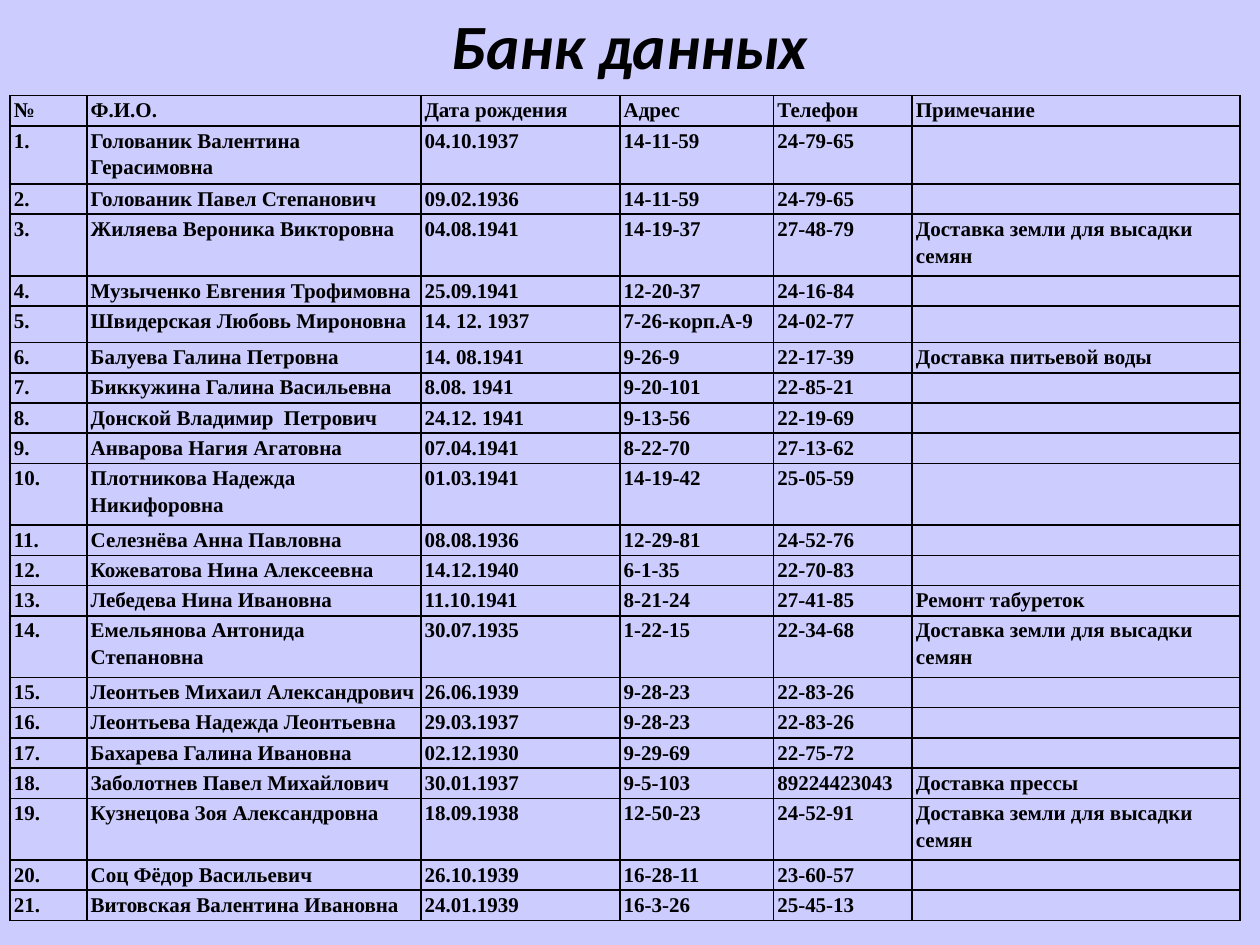
"""Build a slide with a contact register table under a title."""
from lxml import etree
from pptx import Presentation
from pptx.dml.color import RGBColor
from pptx.enum import text
from pptx.oxml import ns
from pptx.util import Inches, Pt

LAVENDER = RGBColor(0xCC, 0xCC, 0xFF)
BLACK = RGBColor(0, 0, 0)

COLUMN_WIDTHS = [0.61, 2.65, 1.58, 1.22, 1.1, 2.6]
ROW_HEIGHT = 0.24
TALL_ROW_HEIGHT = 0.49
SPECIAL_HEIGHTS = {5: 0.29, **dict.fromkeys((3, 10, 14, 19), TALL_ROW_HEIGHT)}

SOIL = "Доставка земли для высадки семян"
HEADER = ("№", "Ф.И.О.", "Дата рождения", "Адрес", "Телефон", "Примечание")
PEOPLE = [
    ("Голованик Валентина Герасимовна", "04.10.1937", "14-11-59", "24-79-65", ""),
    ("Голованик Павел Степанович", "09.02.1936", "14-11-59", "24-79-65", ""),
    ("Жиляева Вероника Викторовна", "04.08.1941", "14-19-37", "27-48-79", SOIL),
    ("Музыченко Евгения Трофимовна", "25.09.1941", "12-20-37", "24-16-84", ""),
    ("Швидерская Любовь Мироновна", "14. 12. 1937", "7-26-корп.А-9", "24-02-77", ""),
    ("Балуева Галина Петровна", "14. 08.1941", "9-26-9", "22-17-39", "Доставка питьевой воды"),
    ("Биккужина Галина Васильевна", "8.08. 1941", "9-20-101", "22-85-21", ""),
    ("Донской Владимир  Петрович", "24.12. 1941", "9-13-56", "22-19-69", ""),
    ("Анварова Нагия Агатовна", "07.04.1941", "8-22-70", "27-13-62", ""),
    ("Плотникова Надежда Никифоровна", "01.03.1941", "14-19-42", "25-05-59", ""),
    ("Селезнёва Анна Павловна", "08.08.1936", "12-29-81", "24-52-76", ""),
    ("Кожеватова Нина Алексеевна", "14.12.1940", "6-1-35", "22-70-83", ""),
    ("Лебедева Нина Ивановна", "11.10.1941", "8-21-24", "27-41-85", "Ремонт табуреток"),
    ("Емельянова Антонида Степановна", "30.07.1935", "1-22-15", "22-34-68", SOIL),
    ("Леонтьев Михаил Александрович", "26.06.1939", "9-28-23", "22-83-26", ""),
    ("Леонтьева Надежда Леонтьевна", "29.03.1937", "9-28-23", "22-83-26", ""),
    ("Бахарева Галина Ивановна", "02.12.1930", "9-29-69", "22-75-72", ""),
    ("Заболотнев Павел Михайлович", "30.01.1937", "9-5-103", "89224423043", "Доставка прессы"),
    ("Кузнецова Зоя Александровна", "18.09.1938", "12-50-23", "24-52-91", SOIL),
    ("Соц Фёдор Васильевич", "26.10.1939", "16-28-11", "23-60-57", ""),
    ("Витовская Валентина Ивановна", "24.01.1939", "16-3-26", "25-45-13", ""),
]


def set_font(paragraph, name, size, italic=False):
    """Give a paragraph a bold black font."""
    font = paragraph.font
    font.name, font.size = name, Pt(size)
    font.bold, font.italic = True, italic
    font.color.rgb = BLACK


def add_title(slide, title):
    """Add the centred slide title."""
    shape = slide.shapes.add_textbox(Inches(0.5), 0, Inches(9), Inches(0.7))
    frame = shape.text_frame
    frame.word_wrap = True
    frame.vertical_anchor = text.MSO_ANCHOR.MIDDLE
    paragraph = frame.paragraphs[0]
    paragraph.text = title
    paragraph.alignment = text.PP_ALIGN.CENTER
    set_font(paragraph, "Calibri", 36, italic=True)


def add_borders(cell):
    """Draw a thin black line on each side of a cell."""
    properties = cell._tc.get_or_add_tcPr()
    for side in ("lnL", "lnR", "lnT", "lnB"):
        line = etree.SubElement(properties, ns.qn(f"a:{side}"), w=str(Pt(1)))
        fill = etree.SubElement(line, ns.qn("a:solidFill"))
        etree.SubElement(fill, ns.qn("a:srgbClr"), val=str(BLACK))


def fill_cell(cell, content):
    """Write and format one table cell."""
    cell.margin_left = cell.margin_right = Inches(0.03)
    cell.margin_top = cell.margin_bottom = 0
    add_borders(cell)
    cell.fill.background()
    paragraph = cell.text_frame.paragraphs[0]
    paragraph.line_spacing = 1.15
    set_font(paragraph, "Times New Roman", 12)
    if content:
        paragraph.text = content
    else:
        etree.SubElement(paragraph._p, ns.qn("a:endParaRPr"), sz="1200")


def add_register(slide, records):
    """Add the register table with one row per record."""
    heights = [SPECIAL_HEIGHTS.get(index, ROW_HEIGHT) for index in range(len(records))]
    table = slide.shapes.add_table(
        len(records), len(COLUMN_WIDTHS), Inches(0.08), Inches(0.76),
        Inches(sum(COLUMN_WIDTHS)), Inches(sum(heights))).table
    table.first_row = table.horz_banding = False
    for column, width in zip(table.columns, COLUMN_WIDTHS):
        column.width = Inches(width)
    for row, height, record in zip(table.rows, heights, records):
        row.height = Inches(height)
        for cell, content in zip(row.cells, record):
            fill_cell(cell, content)


def main():
    """Build and save the presentation."""
    presentation = Presentation()
    presentation.slide_width, presentation.slide_height = Inches(10), Inches(7.5)
    slide = presentation.slides.add_slide(presentation.slide_layouts[6])
    slide.background.fill.solid()
    slide.background.fill.fore_color.rgb = LAVENDER
    add_title(slide, "Банк данных")
    numbered = [(f"{number}.", *person) for number, person in enumerate(PEOPLE, 1)]
    add_register(slide, [HEADER, *numbered])
    presentation.save("out.pptx")


if __name__ == "__main__":
    main()
